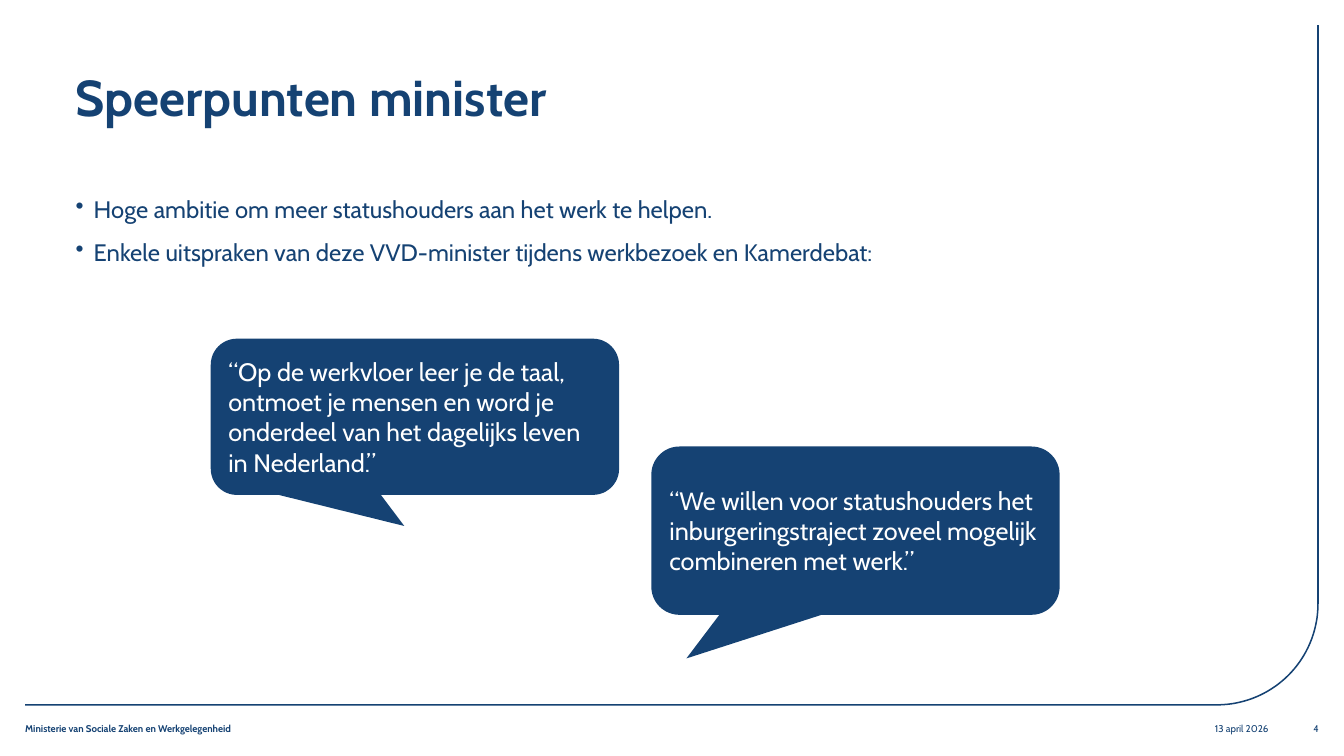
from math import cos, radians, sin

from pptx import Presentation
from pptx.dml.color import RGBColor
from pptx.enum.shapes import MSO_SHAPE
from pptx.enum.text import MSO_ANCHOR, PP_ALIGN
from pptx.oxml import parse_xml
from pptx.oxml.ns import nsdecls
from pptx.util import Inches, Pt

COLORS = {"blue": "154273", "white": "FFFFFF"}
FONT = "Cabin"


def color(name):
    return RGBColor.from_string(COLORS[name])


def write(p, text, size, fill="blue", bold=False, align=PP_ALIGN.LEFT,
          spacing=None, before=0, bullet=False):
    if bullet:
        pPr = p._p.get_or_add_pPr()
        indent = Inches(0.18)
        pPr.set("marL", str(indent))
        pPr.set("indent", str(-indent))
        pPr.append(parse_xml(f'<a:buChar {nsdecls("a")} char="•"/>'))
    p.alignment = align
    p.space_before = Pt(before)
    if spacing:
        p.line_spacing = spacing
    r = p.add_run()
    r.text = text
    r.font.name = FONT
    r.font.size = Pt(size)
    r.font.bold = bold
    r.font.color.rgb = color(fill)


class SlideBuilder:
    def __init__(self, prs):
        self.slide = prs.slides.add_slide(prs.slide_layouts[6])
        self.shapes = self.slide.shapes
        fill = self.slide.background.fill
        fill.solid()
        fill.fore_color.rgb = color("white")

    def paint(self, sp):
        sp.shadow.inherit = False
        sp.fill.solid()
        sp.fill.fore_color.rgb = color("blue")
        sp.line.fill.background()

    def text(self, box, lines, size, before=0, **fmt):
        sp = self.shapes.add_textbox(*map(Inches, box))
        tf = sp.text_frame
        tf.word_wrap = True
        tf.margin_left = tf.margin_right = tf.margin_top = tf.margin_bottom = 0
        for i, line in enumerate(lines):
            p = tf.add_paragraph() if i else tf.paragraphs[0]
            write(p, line, size, before=before if i else 0, **fmt)

    def border(self, left, top, center_x, center_y, radius, width):
        def edge(r):
            arc = [(center_x + r * cos(radians(a)), center_y + r * sin(radians(a)))
                   for a in range(0, 91, 2)]
            return [(center_x + r, top), *arc, (left, center_y + r)]

        outline = edge(radius) + edge(radius - width)[::-1]
        points = [(Inches(x), Inches(y)) for x, y in outline]
        builder = self.shapes.build_freeform(*points[0])
        builder.add_line_segments(points[1:], close=True)
        self.paint(builder.convert_to_shape())

    def callout(self, box, tip, quote):
        sp = self.shapes.add_shape(MSO_SHAPE.ROUNDED_RECTANGULAR_CALLOUT, *map(Inches, box))
        for i, value in enumerate((*tip, 0.167)):
            sp.adjustments[i] = value
        self.paint(sp)
        tf = sp.text_frame
        tf.word_wrap = True
        tf.vertical_anchor = MSO_ANCHOR.MIDDLE
        write(tf.paragraphs[0], quote, 18, fill="white")


def main():
    prs = Presentation()
    prs.slide_width, prs.slide_height = Inches(13.33), Inches(7.5)
    s = SlideBuilder(prs)

    s.text((0.25, 7.17, 3.19, 0.28), ["Ministerie van Sociale Zaken en Werkgelegenheid"],
           7, bold=True)
    s.border(0.25, 0.25, 12.07, 5.99, 1.01, 0.015)
    s.text((0.75, 0.74, 11.83, 0.99), ["Speerpunten minister"], 36, bold=True, spacing=0.87)
    s.text((0.75, 1.92, 11.83, 4.39), [
        "Hoge ambitie om meer statushouders aan het werk te helpen.",
        "Enkele uitspraken van deze VVD-minister tijdens werkbezoek en Kamerdebat:",
    ], 17, before=9, spacing=1.05, bullet=True)
    s.text((11.75, 7.17, 0.83, 0.28), ["13 april 2026"], 7, align=PP_ALIGN.RIGHT)
    s.text((12.65, 7.17, 0.43, 0.28), ["4"], 7, align=PP_ALIGN.RIGHT)

    s.callout((2.09, 3.36, 4.05, 1.55), (-0.026, 0.699),
              "“Op de werkvloer leer je de taal, ontmoet je mensen en word je "
              "onderdeel van het dagelijks leven in Nederland.”")
    s.callout((6.46, 4.43, 4.05, 1.67), (-0.414, 0.759),
              "“We willen voor statushouders het inburgeringstraject zoveel "
              "mogelijk combineren met werk.”")
    prs.save("out.pptx")


if __name__ == "__main__":
    main()
